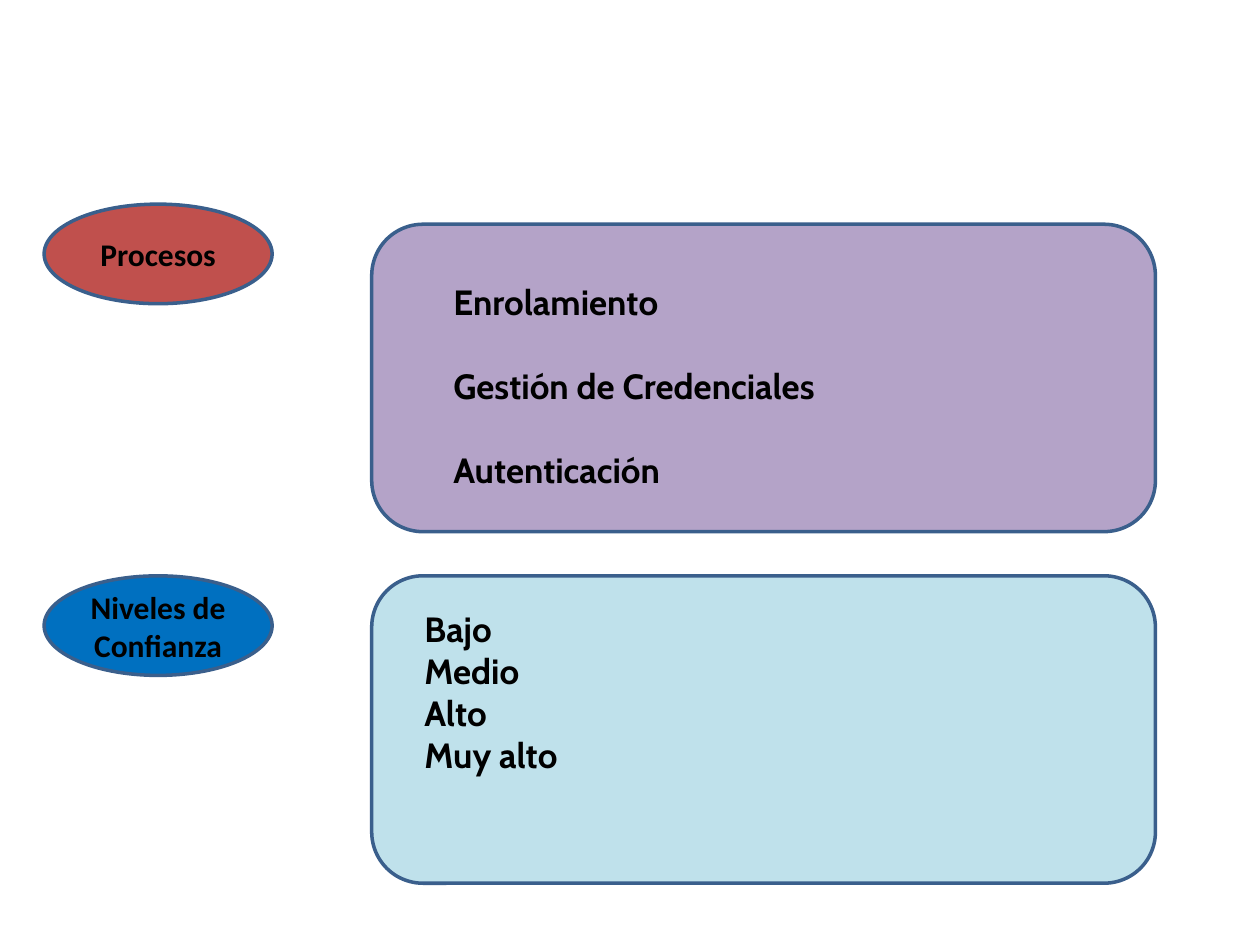
from pptx import Presentation
from pptx.util import Inches, Pt
from pptx.dml.color import RGBColor as Rgb
from pptx.enum.shapes import MSO_SHAPE as Kind
from pptx.enum.text import PP_ALIGN as Align, MSO_ANCHOR as Anchor
from pptx.oxml.ns import qn
from lxml.etree import SubElement

THEME = {
    "ink": "000000", "edge": "3A5F8C", "rule": 2, "alpha": 59,
    "label": ("Calibri", 18), "list": ("Cabin", 20),
}

ROWS = [
    {"label": "Procesos", "oval": "C0504D", "panel": "8064A2",
     "items": ["Enrolamiento", "Gestión de Credenciales", "Autenticación"],
     "tops": (1.62, 1.78), "text": (3.5, 2.18, 5.43, 1.78), "gap": 24},
    {"label": "Niveles de Confianza", "oval": "0070C0", "panel": "93CDDD",
     "items": ["Bajo", "Medio", "Alto", "Muy alto"],
     "tops": (4.57, 4.57), "text": (3.27, 4.77, 5.43, 1.45), "gap": 0},
]
OVAL = (0.35, 1.81, 0.79)
PANEL = (2.95, 6.22, 2.44)


def draw(slide, kind, box, top, fill):
    left, wide, high = box
    shape = slide.shapes.add_shape(
        kind, Inches(left), Inches(top), Inches(wide), Inches(high))
    shape.shadow.inherit = False
    shape.fill.solid()
    shape.fill.fore_color.rgb = Rgb.from_string(fill)
    shape.line.color.rgb = Rgb.from_string(THEME["edge"])
    shape.line.width = Pt(THEME["rule"])
    return shape


def fade(shape):
    tint = shape._element.spPr.find(qn("a:solidFill"))[0]
    SubElement(tint, qn("a:alpha")).set("val", str(THEME["alpha"] * 1000))


def write(frame, items, style, align, gap=0):
    face, size = THEME[style]
    frame.word_wrap = True
    frame.text = "\n".join(items)
    for i, para in enumerate(frame.paragraphs):
        para.alignment = align
        if i and gap:
            para.space_before = Pt(gap)
        for run in para.runs:
            font = run.font
            font.name, font.size, font.bold = face, Pt(size), True
            font.color.rgb = Rgb.from_string(THEME["ink"])


def main():
    deck = Presentation()
    deck.slide_width, deck.slide_height = Inches(10), Inches(7.5)
    slide = deck.slides.add_slide(deck.slide_layouts[6])
    for row in ROWS:
        high, low = row["tops"]
        fade(draw(slide, Kind.ROUNDED_RECTANGLE, PANEL, low, row["panel"]))
        box = slide.shapes.add_textbox(*map(Inches, row["text"]))
        write(box.text_frame, row["items"], "list", Align.LEFT, row["gap"])
        oval = draw(slide, Kind.OVAL, OVAL, high, row["oval"])
        oval.text_frame.vertical_anchor = Anchor.MIDDLE
        write(oval.text_frame, [row["label"]], "label", Align.CENTER)
    deck.save("out.pptx")


if __name__ == "__main__":
    main()
